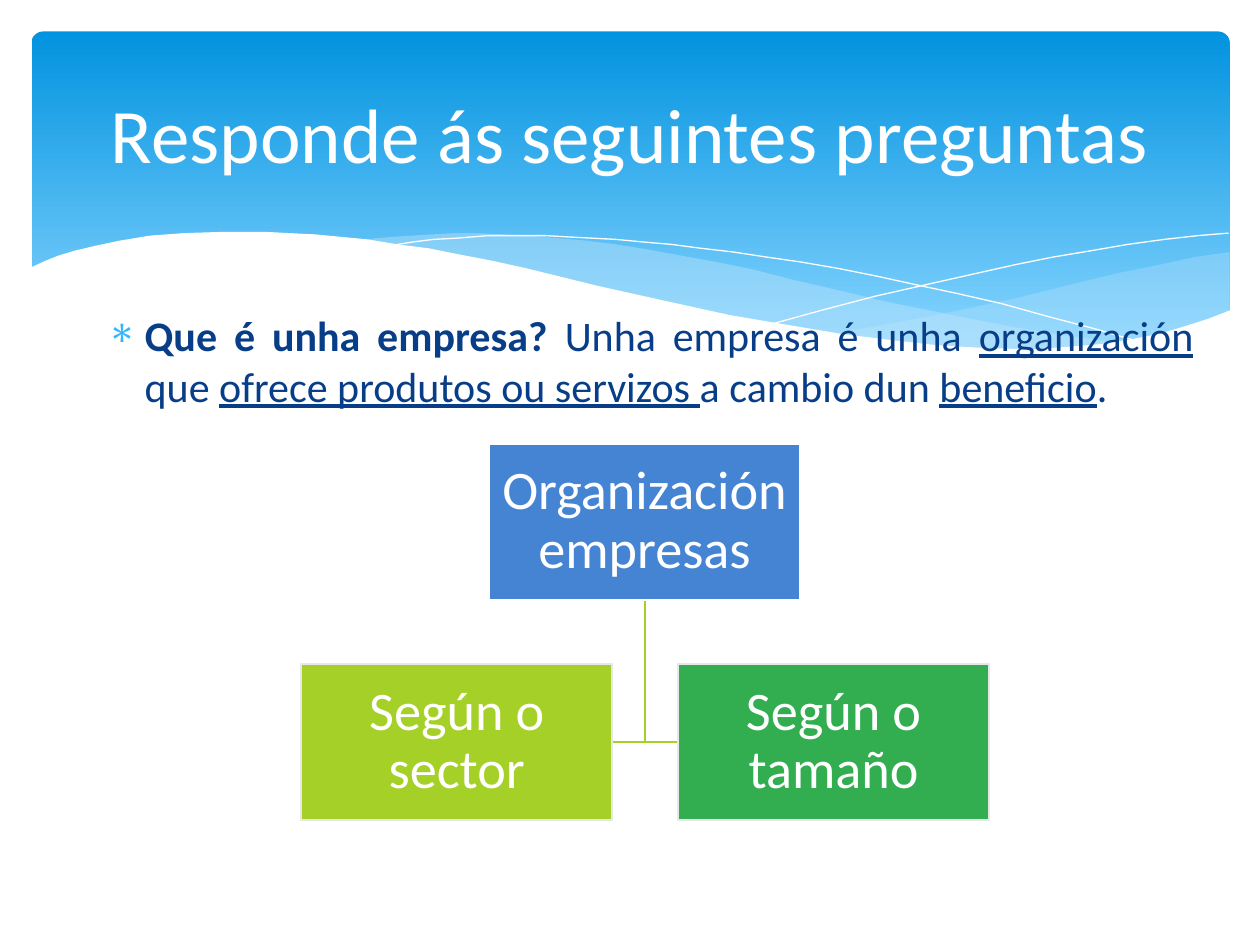
"""Builds the slide on what a company is and how companies are organised."""
from lxml import etree
from pptx import Presentation, util as u
from pptx.dml.color import RGBColor
from pptx.enum import shapes, text
from pptx.oxml import ns

COLORS = {
    "sky": "0293E0", "pale_sky": "83D3FE", "wave": "C6E7FC", "white": "FFFFFF",
    "navy": "073E87", "bullet": "31B6FD", "blue": "4584D3", "lime": "A5D028",
    "green": "32AE51", "edge": "E7E7E7",
}
FONT = "Calibri"

deck = Presentation()
deck.slide_width, deck.slide_height = u.Inches(10), u.Inches(7.5)
slide = deck.slides.add_slide(deck.slide_layouts[6])


def draw_path(points, fill=None, alpha=None, line=None, width=0):
    """Draws a filled outline or an open line through points in inches."""
    corners = [(u.Inches(x), u.Inches(y)) for x, y in points]
    builder = slide.shapes.build_freeform(*corners[0])
    builder.add_line_segments(corners[1:], close=fill is not None)
    outline = builder.convert_to_shape()
    outline.shadow.inherit = False
    if fill:
        outline.fill.solid()
        outline.fill.fore_color.rgb = RGBColor.from_string(COLORS[fill])
        outline.line.fill.background()
    else:
        outline.fill.background()
        outline.line.color.rgb = RGBColor.from_string(COLORS[line])
        outline.line.width = u.Pt(width)
    if alpha:
        tint = outline.fill._xPr.find(".//" + ns.qn("a:srgbClr"))
        etree.SubElement(tint, ns.qn("a:alpha"), val=str(alpha * 1000))


def style_run(run, size, color):
    """Sets the font, size and colour of a run."""
    run.font.name = FONT
    run.font.size = u.Pt(size)
    run.font.color.rgb = RGBColor.from_string(COLORS[color])


banner = slide.shapes.add_shape(
    shapes.MSO_SHAPE.ROUNDED_RECTANGLE,
    u.Inches(0.25), u.Inches(0.25), u.Inches(9.51), u.Inches(2.7))
banner.adjustments[0] = 0.034
banner.shadow.inherit = False
banner.line.fill.background()
banner.fill.gradient()
banner.fill.gradient_angle = 270
for stop, (position, color) in zip(banner.fill.gradient_stops, [(0, "sky"), (0.9, "pale_sky")]):
    stop.position = position
    stop.color.rgb = RGBColor.from_string(COLORS[color])

right_wave = [
    (9.76, 2), (9.48, 2.04), (9.21, 2.1), (8.91, 2.16), (8.61, 2.23), (8.05, 2.37),
    (7.53, 2.48), (7.06, 2.57), (6.61, 2.65), (6.91, 2.69), (7.19, 2.72), (7.45, 2.75),
    (7.69, 2.77), (8.03, 2.78), (8.35, 2.77), (8.63, 2.75), (8.89, 2.72), (9.13, 2.67),
    (9.35, 2.62), (9.49, 2.57), (9.63, 2.52), (9.76, 2.47),
]
middle_wave = [
    (8.93, 2.73), (8.66, 2.69), (8.37, 2.65), (8.07, 2.6), (7.75, 2.54), (7.41, 2.47),
    (7.06, 2.4), (6.68, 2.31), (6.29, 2.22), (5.98, 2.14), (5.69, 2.08), (5.41, 2.03),
    (5.14, 1.98), (4.89, 1.94), (4.65, 1.91), (4.42, 1.89), (4.2, 1.87), (3.99, 1.86),
    (3.8, 1.85), (3.61, 1.85), (3.44, 1.86), (3.28, 1.87), (3.13, 1.88), (2.99, 1.89),
    (2.86, 1.91), (3.23, 1.96), (3.62, 2.03), (4.04, 2.11), (4.49, 2.22), (4.91, 2.32),
    (5.3, 2.4), (5.66, 2.48), (6.01, 2.55), (6.34, 2.61), (6.65, 2.66), (6.95, 2.7),
    (7.22, 2.74), (7.48, 2.76), (7.73, 2.77), (7.96, 2.78), (8.28, 2.78), (8.57, 2.77),
    (8.76, 2.75),
]
falling_curve = [
    (3.09, 1.95), (3.28, 1.92), (3.44, 1.9), (3.63, 1.89), (3.87, 1.87), (4.16, 1.87),
    (4.33, 1.87), (4.5, 1.88), (4.69, 1.89), (4.89, 1.9), (5.1, 1.92), (5.33, 1.94),
    (5.56, 1.97), (5.82, 2), (6.08, 2.04), (6.36, 2.08), (6.65, 2.13), (6.95, 2.19),
    (7.27, 2.26), (7.6, 2.33), (7.95, 2.41), (8.31, 2.51), (8.69, 2.61), (9.07, 2.72),
]
rising_curve = [
    (6.13, 2.57), (6.53, 2.46), (6.95, 2.35), (7.48, 2.23), (8.06, 2.1), (8.36, 2.04),
    (8.66, 1.99), (8.95, 1.94), (9.24, 1.9), (9.51, 1.87), (9.75, 1.85),
]
page_edge = [
    (9.77, 2.46), (9.59, 2.53), (9.4, 2.59), (9.2, 2.65), (8.99, 2.69), (8.75, 2.73),
    (8.5, 2.75), (8.23, 2.77), (8.09, 2.77), (7.78, 2.76), (7.44, 2.74), (7.08, 2.7),
    (6.68, 2.65), (6.26, 2.58), (5.79, 2.5), (5.29, 2.39), (4.75, 2.27), (4.18, 2.13),
    (3.91, 2.07), (3.65, 2.02), (3.4, 1.97), (3.16, 1.94), (2.92, 1.9), (2.71, 1.88),
    (2.5, 1.86), (2.3, 1.85), (2.11, 1.84), (1.77, 1.84), (1.46, 1.85), (1.19, 1.87),
    (0.95, 1.91), (0.76, 1.95), (0.59, 1.99), (0.46, 2.03), (0.36, 2.07), (0.23, 2.13),
    (0.23, 3.29), (9.77, 3.29),
]
draw_path(right_wave, fill="wave", alpha=29)
draw_path(middle_wave, fill="wave", alpha=40)
draw_path(falling_curve, line="white")
draw_path(rising_curve, line="white")
draw_path(page_edge, fill="white")

answer = slide.shapes.add_textbox(
    u.Inches(0.75), u.Inches(2.41), u.Inches(8.82), u.Inches(4.41)).text_frame
answer.word_wrap = True
definition = answer.paragraphs[0]
definition.alignment = text.PP_ALIGN.JUSTIFY
definition.space_before = u.Pt(4.8)
bullet = definition._p.get_or_add_pPr()
bullet.set("marL", str(u.Inches(0.3)))
bullet.set("indent", str(u.Inches(-0.3)))
bullet_color = etree.SubElement(bullet, ns.qn("a:buClr"))
etree.SubElement(bullet_color, ns.qn("a:srgbClr"), val=COLORS["bullet"])
etree.SubElement(bullet, ns.qn("a:buChar"), char="∗")
for wording, bold, underline in [
    ("Que é unha empresa? ", True, False),
    ("Unha empresa é unha ", False, False),
    ("organización", False, True),
    (" que ", False, False),
    ("ofrece produtos ou servizos ", False, True),
    ("a cambio dun ", False, False),
    ("beneficio", False, True),
    (".", False, False),
]:
    run = definition.add_run()
    run.text = wording
    style_run(run, 24, "navy")
    run.font.bold = bold
    run.font.underline = underline

title = slide.shapes.add_textbox(
    u.Inches(0.5), u.Inches(0.37), u.Inches(9), u.Inches(1.37)).text_frame
title.word_wrap = True
title.vertical_anchor = text.MSO_ANCHOR.MIDDLE
title.text = "Responde ás seguintes preguntas"
title.paragraphs[0].alignment = text.PP_ALIGN.CENTER
style_run(title.paragraphs[0].runs[0], 44, "white")

for branch_end in (5.38, 4.86):
    draw_path([(5.12, 4.75), (5.12, 5.89), (branch_end, 5.89)], line="lime", width=1.25)

for wording, left, top, fill, edge in [
    ("Organización empresas", 3.88, 3.52, "blue", "white"),
    ("Según o sector", 2.39, 5.27, "lime", "edge"),
    ("Según o tamaño", 5.38, 5.27, "green", "edge"),
]:
    box = slide.shapes.add_shape(
        shapes.MSO_SHAPE.RECTANGLE,
        u.Inches(left), u.Inches(top), u.Inches(2.47), u.Inches(1.24))
    box.shadow.inherit = False
    box.fill.solid()
    box.fill.fore_color.rgb = RGBColor.from_string(COLORS[fill])
    box.line.color.rgb = RGBColor.from_string(COLORS[edge])
    box.line.width = u.Pt(1.25)
    label = box.text_frame
    label.margin_left = label.margin_right = u.Inches(0.02)
    label.margin_top = label.margin_bottom = u.Inches(0.02)
    label.word_wrap = True
    label.vertical_anchor = text.MSO_ANCHOR.MIDDLE
    label.text = wording
    label.paragraphs[0].alignment = text.PP_ALIGN.CENTER
    label.paragraphs[0].line_spacing = 0.9
    style_run(label.paragraphs[0].runs[0], 31, "white")

deck.save("out.pptx")
